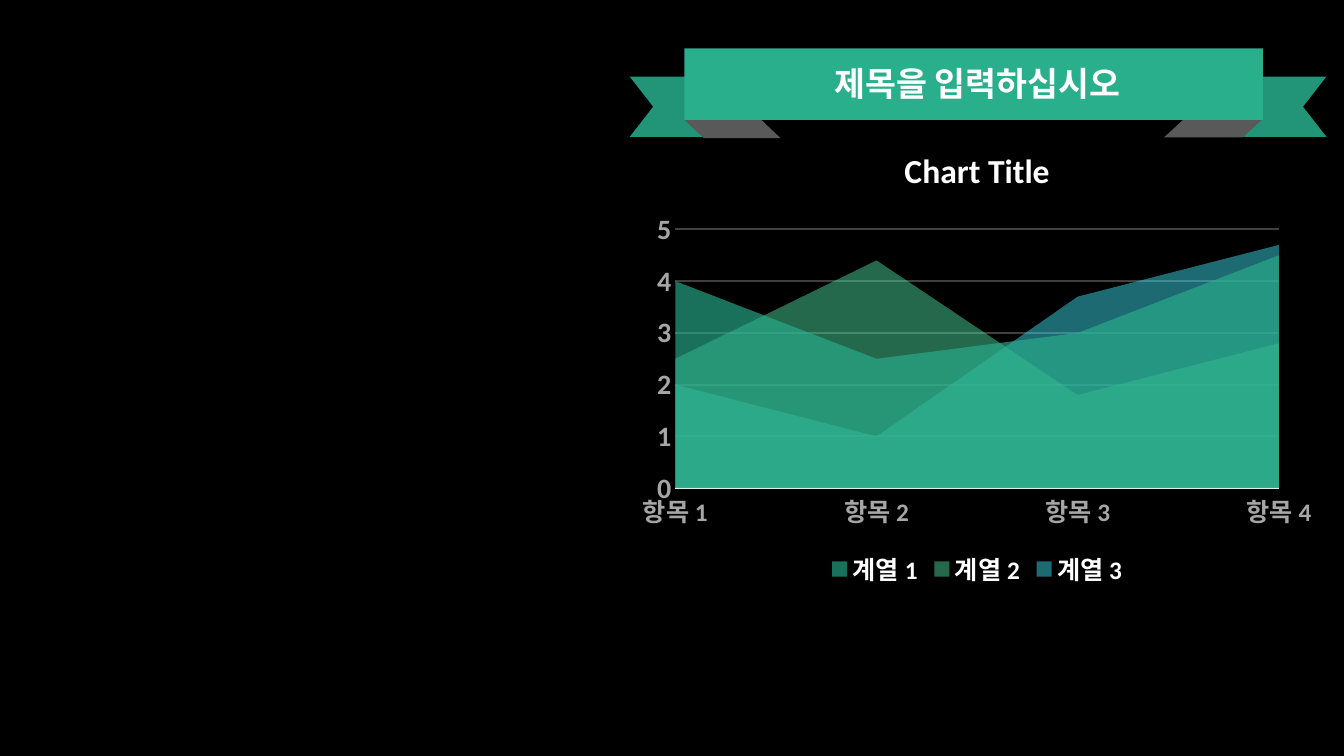
from dataclasses import dataclass

from lxml import etree
from pptx import Presentation
from pptx import util as u
from pptx.chart.data import CategoryChartData
from pptx.dml.color import RGBColor
from pptx.enum import chart as charts, shapes, text
from pptx.oxml.ns import qn

BLACK = RGBColor(0x00, 0x00, 0x00)
WHITE = RGBColor(0xFF, 0xFF, 0xFF)
LABEL_GRAY = RGBColor(0xA6, 0xA6, 0xA6)
GRID_GRAY = RGBColor(0x40, 0x40, 0x40)
FOLD_GRAY = RGBColor(0x59, 0x59, 0x59)
GREEN = RGBColor(0x29, 0xAF, 0x8C)
MINT = RGBColor(0x4A, 0xD2, 0x9B)
CYAN = RGBColor(0x3B, 0xD5, 0xE5)
FONT = "Calibri"


@dataclass(frozen=True)
class RibbonPart:
    kind: shapes.MSO_SHAPE
    left: float
    top: float
    width: float
    height: float
    color: RGBColor
    opacity: int = 100
    flipped: bool = False
    adjustments: tuple[float, ...] = ()


@dataclass(frozen=True)
class Series:
    name: str
    values: tuple[float, ...]
    color: RGBColor
    opacity: int


TAIL = shapes.MSO_SHAPE.NOTCHED_RIGHT_ARROW
FOLD = shapes.MSO_SHAPE.FLOWCHART_DATA
TAIL_SHAPE = (1, 0.39)

RIBBON = (
    RibbonPart(TAIL, 15.87, 1.93, 3.53, 1.52, GREEN, 85, False, TAIL_SHAPE),
    RibbonPart(FOLD, 17.25, 3.02, 2.42, 0.46, FOLD_GRAY, flipped=True),
    RibbonPart(TAIL, 29.9, 1.93, 3.53, 1.52, GREEN, 85, True, TAIL_SHAPE),
    RibbonPart(FOLD, 29.34, 3, 2.48, 0.46, FOLD_GRAY),
    RibbonPart(shapes.MSO_SHAPE.RECTANGLE, 17.25, 1.22, 14.58, 1.8, GREEN),
)

CATEGORIES = [f"항목 {number}" for number in range(1, 5)]
SERIES = (
    Series("계열 1", (4, 2.5, 3, 4.5), GREEN, 65),
    Series("계열 2", (2.5, 4.4, 1.8, 2.8), MINT, 50),
    Series("계열 3", (2, 1, 3.7, 4.7), CYAN, 50),
)


def style_font(font, size: float, color: RGBColor) -> None:
    font.name = FONT
    font.size = u.Pt(size)
    font.bold = True
    font.color.rgb = color


def fill_solid(fill, properties, color: RGBColor, opacity: int) -> None:
    """Fill with a colour; properties is the XML element that holds the fill."""
    fill.solid()
    fill.fore_color.rgb = color
    if opacity < 100:
        tone = properties.find(qn("a:solidFill")).find(qn("a:srgbClr"))
        etree.SubElement(tone, qn("a:alpha")).set("val", str(opacity * 1000))


def add_ribbon_part(page, part: RibbonPart) -> None:
    box = page.shapes.add_shape(
        part.kind, u.Cm(part.left), u.Cm(part.top), u.Cm(part.width), u.Cm(part.height)
    )
    box.shadow.inherit = False
    for index, value in enumerate(part.adjustments):
        box.adjustments[index] = value
    properties = box.element.spPr
    fill_solid(box.fill, properties, part.color, part.opacity)
    box.line.fill.background()
    if part.flipped:
        properties.find(qn("a:xfrm")).set("flipH", "1")


def place_title(page) -> None:
    title = page.shapes.title
    title.left, title.top = u.Cm(20.42), u.Cm(1.45)
    title.width, title.height = u.Cm(8.41), u.Cm(1.27)
    frame = title.text_frame
    frame.text = "제목을 입력하십시오"
    frame.word_wrap = False
    frame.vertical_anchor = text.MSO_ANCHOR.MIDDLE
    para = frame.paragraphs[0]
    para.alignment = text.PP_ALIGN.CENTER
    style_font(para.runs[0].font, 24, WHITE)
    # The title lies in front of the ribbon.
    title.element.getparent().append(title.element)


def style_axes(chart) -> None:
    for axis, size in ((chart.category_axis, 18), (chart.value_axis, 20)):
        axis.major_tick_mark = charts.XL_TICK_MARK.NONE
        axis.minor_tick_mark = charts.XL_TICK_MARK.NONE
        style_font(axis.tick_labels.font, size, LABEL_GRAY)
    baseline = chart.category_axis.format.line
    baseline.color.rgb = WHITE
    baseline.width = u.Pt(0.75)

    values = chart.value_axis
    values.minimum_scale, values.maximum_scale, values.major_unit = 0, 5, 1
    values.tick_labels.number_format = "General"
    values.tick_labels.number_format_is_linked = False
    values.format.line.fill.background()
    values.has_major_gridlines = True
    grid = values.major_gridlines.format.line
    grid.color.rgb = GRID_GRAY
    grid.width = u.Pt(1.5)


def add_area_chart(page) -> None:
    data = CategoryChartData()
    data.categories = CATEGORIES
    for series in SERIES:
        data.add_series(series.name, series.values)
    chart = page.shapes.add_chart(
        charts.XL_CHART_TYPE.AREA,
        u.Cm(15.85), u.Cm(3.2), u.Cm(17.55), u.Cm(11.73), data,
    ).chart
    style_font(chart.font, 20, WHITE)

    chart.has_title = True
    heading = chart.chart_title.text_frame
    heading.text = "Chart Title"
    style_font(heading.paragraphs[0].runs[0].font, 24, WHITE)
    chart.chart_title.include_in_layout = False

    chart.has_legend = True
    chart.legend.position = charts.XL_LEGEND_POSITION.BOTTOM
    chart.legend.include_in_layout = False
    style_font(chart.legend.font, 18, WHITE)

    style_axes(chart)
    plot = chart.plots[0]
    plot.vary_by_categories = False
    for area, series in zip(plot.series, SERIES):
        fill = area.format.fill
        fill.solid()
        properties = area.format.element.spPr if hasattr(area.format, "element") else area._element.spPr
        fill_solid(fill, properties, series.color, series.opacity)


def main() -> None:
    deck = Presentation()
    deck.slide_width, deck.slide_height = u.Cm(33.87), u.Cm(19.05)
    page = deck.slides.add_slide(deck.slide_layouts[5])
    page.background.fill.solid()
    page.background.fill.fore_color.rgb = BLACK
    add_area_chart(page)
    for part in RIBBON:
        add_ribbon_part(page, part)
    place_title(page)
    deck.save("out.pptx")


if __name__ == "__main__":
    main()
